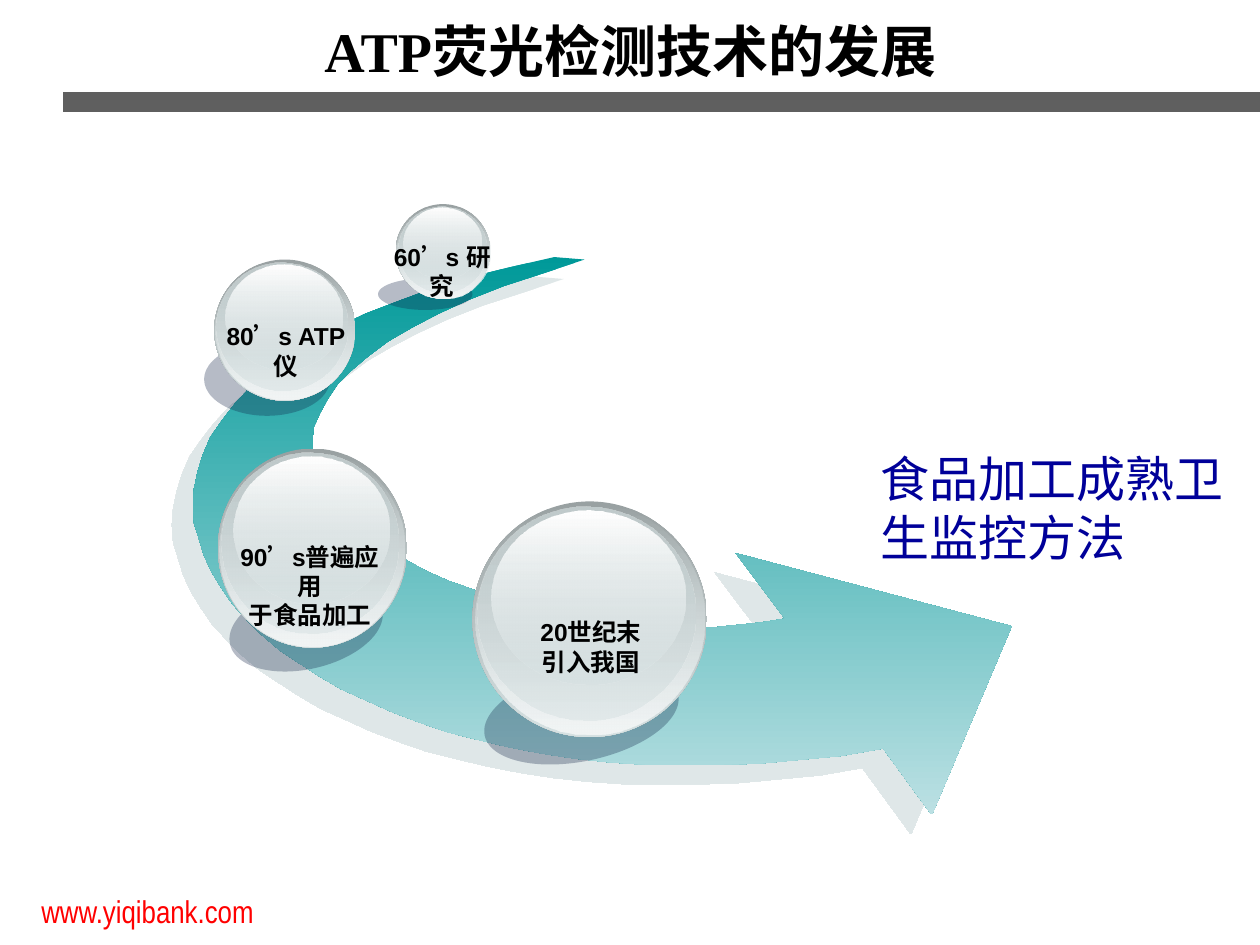
from dataclasses import dataclass

from lxml import etree
from pptx import Presentation
from pptx.dml.color import RGBColor
from pptx.enum.lang import MSO_LANGUAGE_ID
from pptx.enum.shapes import MSO_CONNECTOR, MSO_SHAPE
from pptx.enum.text import MSO_ANCHOR, MSO_AUTO_SIZE, PP_ALIGN
from pptx.oxml.ns import qn
from pptx.util import Pt

PX = 9144  # 100 px to the inch
OVAL = MSO_SHAPE.OVAL
STRAIGHT = MSO_CONNECTOR.STRAIGHT
LEFT, CENTER = PP_ALIGN.LEFT, PP_ALIGN.CENTER
TOP = MSO_ANCHOR.TOP
FIXED = MSO_AUTO_SIZE.NONE
CHINESE = MSO_LANGUAGE_ID.SIMPLIFIED_CHINESE


@dataclass(frozen=True)
class Theme:
    black: str = "000000"
    navy: str = "000099"
    red: str = "FF0000"
    rule: str = "5F5F5F"
    shade: tuple = (("0F2145", 30),)
    tail: tuple = (("009999", 100), ("BBE0E3", 100))
    ghost: tuple = ("C1D1D3", 50)
    rim: tuple = (("99A1A2", 100), ("D6E1E2", 100))
    glow: tuple = (("D6E1E2", 0), ("F2F5F5", 100))
    body: tuple = (("C1CBCC", 100), ("D6E1E2", 48))
    shine: tuple = (("FFFFFF", 100), ("D6E1E2", 38))
    sans: str = "Arial"
    narrow: str = "Arial Narrow"
    serif: str = "Times New Roman"
    head: int = 32
    lead: int = 28
    link: int = 18
    label: int = 14


THEME = Theme()

# Each layer of a ball: left, top, width and height as parts of the ball
LAYERS = [
    (THEME.rim, (0, 0, 1, 1)),
    (THEME.glow, (0.01, 0.01, 0.98, 0.98)),
    (THEME.body, (0.02, 0.02, 0.93, 0.91)),
    (THEME.shine, (0.08, 0.04, 0.83, 0.74)),
]

# Ball, shade, turn of the shade, label box, label lines
BALLS = [
    ((375, 398, 186, 187), (383, 531, 157, 73), -12,
     (419, 485, 100, 57), ["20世纪末", "引入我国"]),
    ((173, 356, 150, 158), (181, 464, 124, 67), -13,
     (178, 425, 136, 57), ["90’s普遍应用", "于食品加工"]),
    ((170, 206, 112, 112), (162, 272, 100, 58), 0,
     (166, 250, 122, 33), ["80’s ATP仪"]),
    ((314, 162, 75, 75), (300, 221, 75, 25), 0,
     (300, 187, 102, 33), ["60’s 研究"]),
]

OUTER = [
    (440, 204), (405, 212), (373, 220), (343, 229), (316, 239), (290, 249),
    (267, 260), (247, 272), (228, 283), (212, 296), (198, 308), (186, 321),
    (176, 334), (167, 347), (161, 361), (157, 374), (154, 388), (153, 401),
    (154, 415), (158, 428), (162, 441), (168, 454), (176, 467), (185, 480),
    (196, 492), (208, 504), (222, 516), (237, 526), (254, 537), (271, 547),
    (291, 556), (311, 565), (332, 573), (355, 581), (379, 587), (404, 593),
    (430, 598), (456, 602), (484, 605), (513, 607), (542, 607), (573, 607),
    (603, 606), (635, 603), (667, 600), (701, 594),
]
TIP = [(739, 646), (740, 646), (803, 497), (584, 439)]
INNER = [
    (623, 491), (604, 494), (585, 496), (566, 498), (546, 498), (526, 497),
    (506, 496), (486, 494), (466, 491), (447, 488), (427, 484), (409, 479),
    (390, 473), (373, 467), (356, 461), (340, 454), (325, 446), (311, 438),
    (298, 429), (287, 421), (276, 411), (267, 402), (260, 392), (254, 381),
    (250, 371), (248, 361), (248, 350), (249, 339), (254, 328), (260, 317),
    (268, 305), (279, 294), (292, 283), (308, 271), (327, 260), (348, 249),
    (372, 238), (400, 227), (431, 217), (464, 206),
]


def emu(box):
    return [round(n) * PX for n in box]


def add(parent, tag, **attrs):
    node = etree.SubElement(parent, qn(tag))
    for key, value in attrs.items():
        node.set(key, str(value))
    return node


def tint(parent, color, alpha):
    node = add(parent, "a:srgbClr", val=color)
    if alpha < 100:
        add(node, "a:alpha", val=alpha * 1000)


def paint(shape, stops):
    """Fill with one colour, or with a downward gradient; drop the outline."""
    shape.line.fill.background()
    shape.shadow.inherit = False
    shape.fill.background()
    props = shape._element.spPr
    blank = props.find(qn("a:noFill"))
    if len(stops) == 1:
        fill = etree.Element(qn("a:solidFill"))
        tint(fill, *stops[0])
    else:
        fill = etree.Element(qn("a:gradFill"), rotWithShape="1")
        marks = add(fill, "a:gsLst")
        for i, stop in enumerate(stops):
            tint(add(marks, "a:gs", pos=i * 100000), *stop)
        add(fill, "a:lin", ang=5400000, scaled=0)
    props.replace(blank, fill)


class Deck:
    def __init__(self, theme):
        self.theme = theme
        self.file = Presentation()
        self.file.slide_width, self.file.slide_height = emu((1000, 750))
        self.slide = self.file.slides.add_slide(self.file.slide_layouts[5])
        self.shapes = self.slide.shapes

    def fill(self, frame, lines, size, face, color, bold=False, align=LEFT):
        """Set the lines as paragraphs of the frame."""
        frame.word_wrap = True
        frame.auto_size = FIXED
        frame.vertical_anchor = TOP
        for i, line in enumerate(lines):
            para = frame.add_paragraph() if i else frame.paragraphs[0]
            para.alignment = align
            run = para.add_run()
            run.text = line
            font = run.font
            font.size, font.name, font.bold = Pt(size), face, bold
            font.color.rgb = RGBColor.from_string(color)
            font.language_id = CHINESE

    def title(self, text, box):
        shape = self.shapes.title
        shape.left, shape.top, shape.width, shape.height = emu(box)
        frame = shape.text_frame
        frame.margin_left = frame.margin_right = 0
        frame.margin_top = frame.margin_bottom = 0
        look = self.theme
        self.fill(frame, [text], look.head, look.serif, look.black,
                  True, CENTER)

    def text(self, lines, box, *look, shapes=None):
        shape = (shapes or self.shapes).add_textbox(*emu(box))
        self.fill(shape.text_frame, lines, *look)

    def rule(self, start, end, weight):
        line = self.shapes.add_connector(STRAIGHT, *emu(start + end))
        line.line.width = Pt(weight)
        line.line.color.rgb = RGBColor.from_string(self.theme.rule)
        add(line._element.spPr, "a:effectLst")

    def arrow(self, points):
        pen = self.shapes.build_freeform(*points[0], scale=PX)
        pen.add_line_segments(points[1:], close=True)
        shape = pen.convert_to_shape()
        paint(shape, self.theme.tail)
        effects = shape._element.spPr.find(qn("a:effectLst"))
        drop = add(effects, "a:outerShdw", blurRad=0, dist=Pt(16.3),
                   dir=137 * 60000, algn="ctr", rotWithShape=0)
        tint(drop, *self.theme.ghost)

    def ball(self, box, shade, turn, label, lines):
        look = self.theme
        shapes = self.shapes.add_group_shape().shapes
        cast = shapes.add_shape(OVAL, *emu(shade))
        cast.rotation = turn
        paint(cast, look.shade)
        x, y, w, h = box
        for stops, (dx, dy, dw, dh) in LAYERS:
            part = (x + dx * w, y + dy * h, dw * w, dh * h)
            paint(shapes.add_shape(OVAL, *emu(part)), stops)
        self.text(lines, label, look.label, look.sans, look.black, True,
                  CENTER, shapes=shapes)

    def save(self):
        self.file.save("out.pptx")


def main():
    deck = Deck(THEME)
    deck.rule((50, 81), (1000, 81), 11.82)
    deck.arrow(OUTER + TIP + INNER)
    deck.text(["食品加工成熟卫生监控方法"], (689, 351, 292, 103),
              THEME.lead, THEME.sans, THEME.navy)
    for ball in BALLS:
        deck.ball(*ball)
    deck.title("ATP荧光检测技术的发展", (67, 13, 867, 79))
    deck.text(["www.yiqibank.com"], (23, 703, 289, 40),
              THEME.link, THEME.narrow, THEME.red)
    deck.save()


if __name__ == "__main__":
    main()
